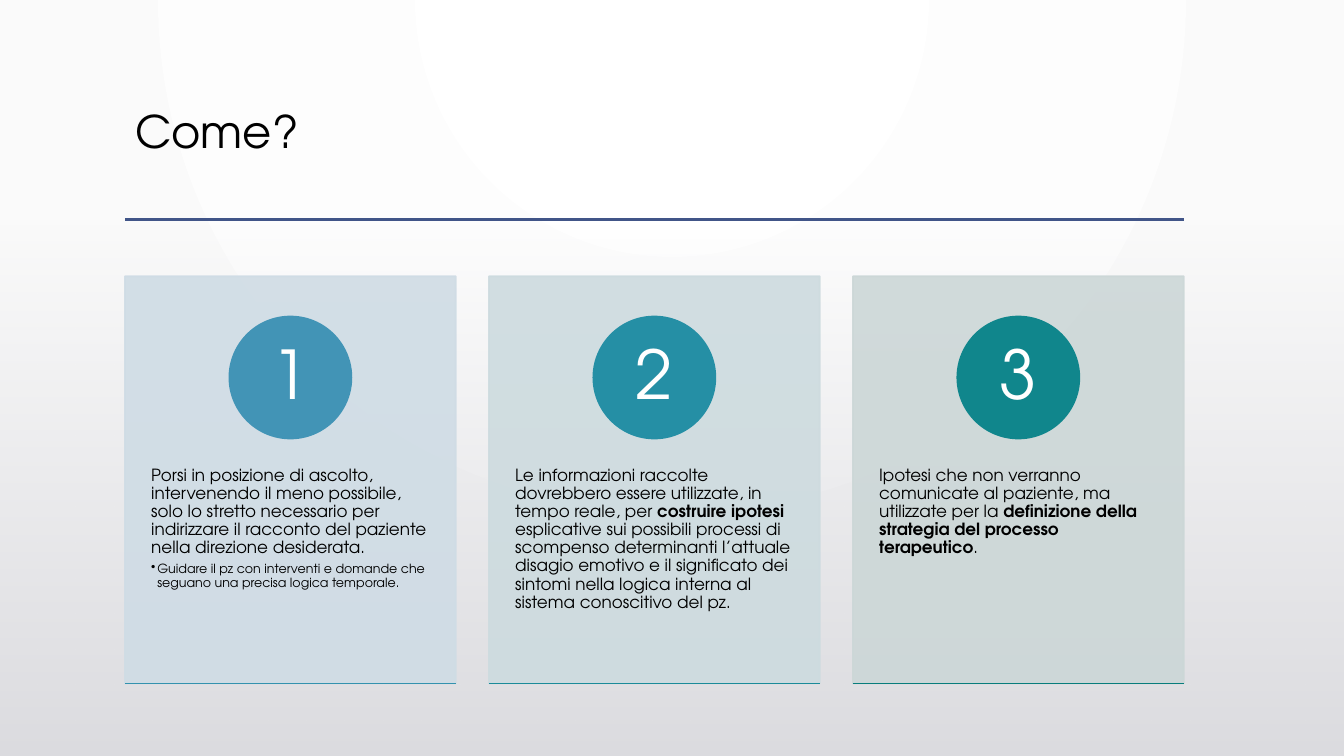
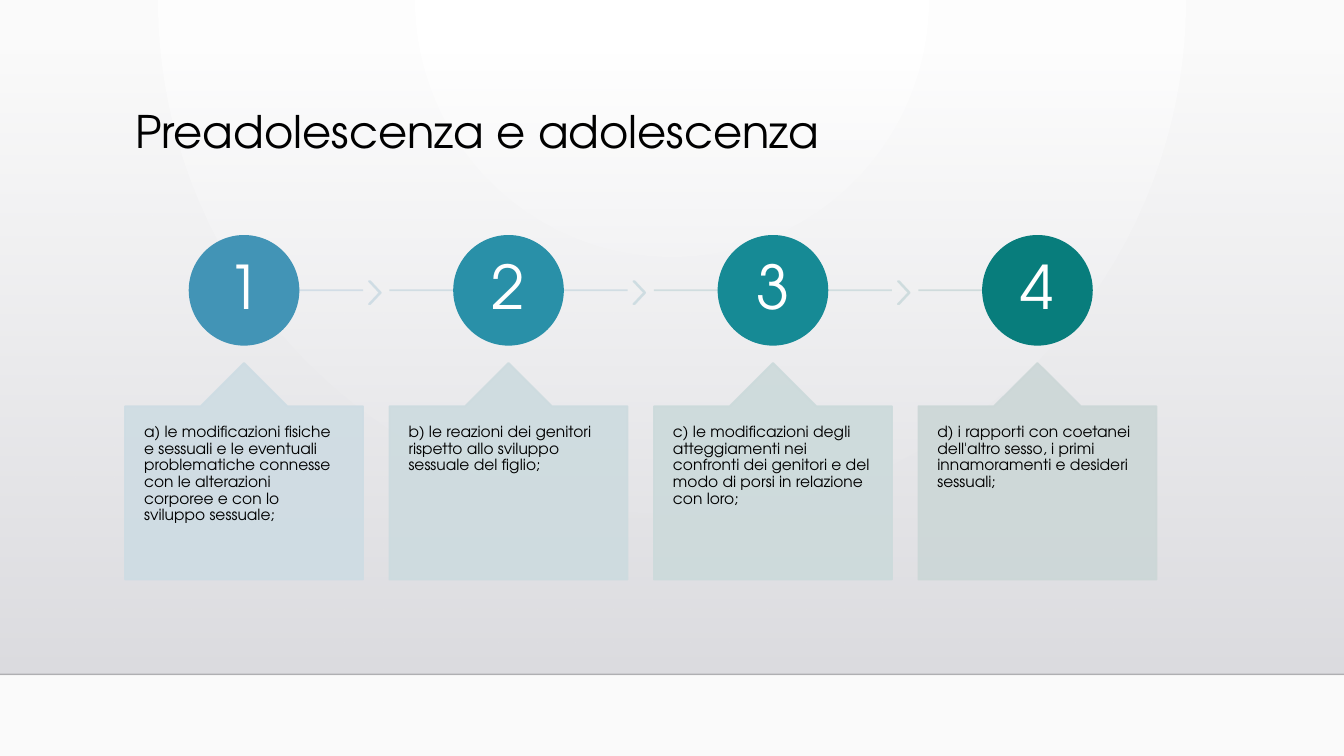
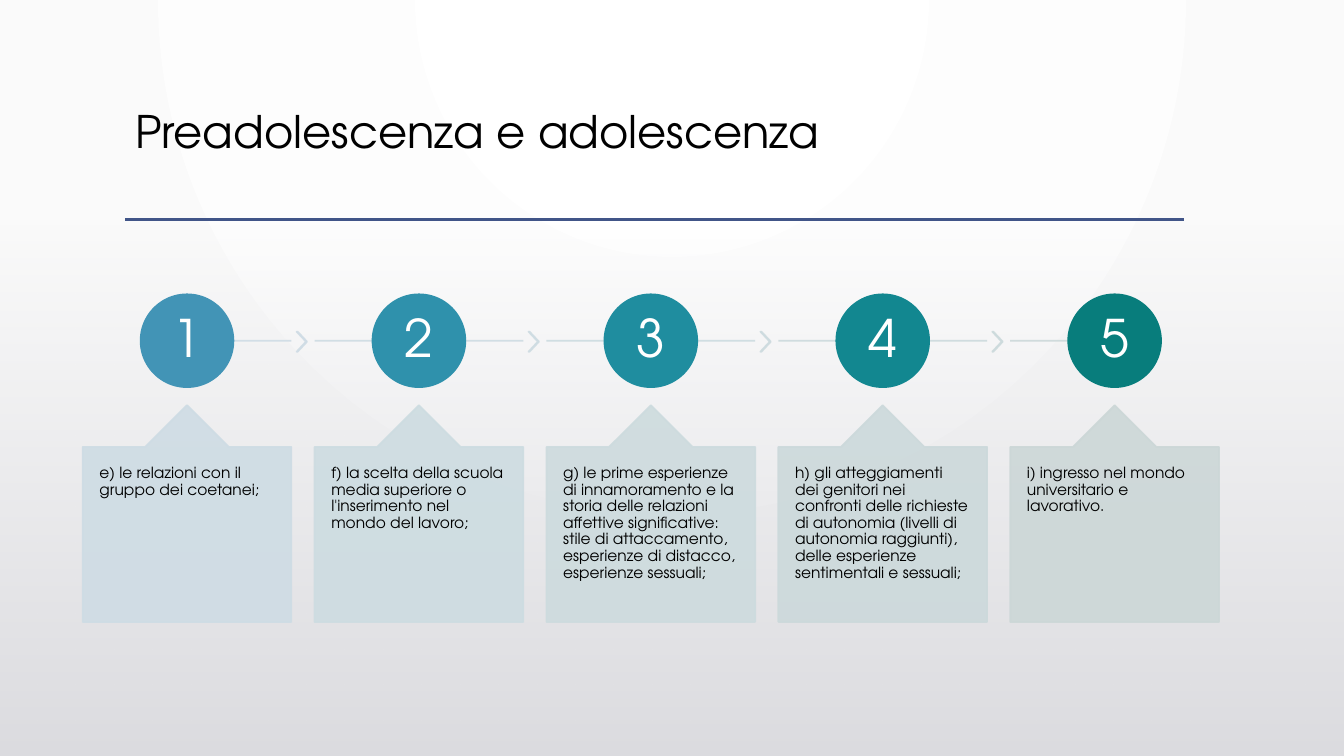
from lxml import etree
from pptx import Presentation
from pptx import util as u
from pptx.dml import color
from pptx.enum import shapes, text
from pptx.oxml import ns

FONT = "TeX Gyre Adventor"
BLACK, WHITE, RULE, HAIRLINE = "000000", "FFFFFF", "415588", "000001"
FADE, BAND_END, PAPER = "DCDCE0", "DEDEE2", "FAFAFA"
SLIDE_WIDTH, SLIDE_HEIGHT = 13.33, 7.5
MARGIN, CONTENT_WIDTH = 1.24, 10.5
TITLE_BOX = (MARGIN, 1.04, CONTENT_WIDTH, 1.15)
TINT_OPACITY = 90


# Shared helpers
def rgb(value):
    return color.RGBColor.from_string(value)


def inches(values):
    return [u.Inches(value) for value in values]


def apply(target, values):
    for name, value in values.items():
        setattr(target, name, value)


def set_opacity(shape, percent):
    for item in shape.element.spPr.iter(ns.qn("a:srgbClr")):
        etree.SubElement(item, ns.qn("a:alpha"), val=str(percent * 1000))


def set_gradient(fill, parent, stops, focus=None):
    """Stops are (position, colour, opacity); a focus makes it circular."""
    fill.background()
    gradient = etree.Element(ns.qn("a:gradFill"), rotWithShape="1")
    stop_list = etree.SubElement(gradient, ns.qn("a:gsLst"))
    for position, value, opacity in stops:
        stop = etree.SubElement(stop_list, ns.qn("a:gs"), pos=str(position * 1000))
        item = etree.SubElement(stop, ns.qn("a:srgbClr"), val=value)
        if opacity < 100:
            etree.SubElement(item, ns.qn("a:alpha"), val=str(opacity * 1000))
    if focus:
        circle = etree.SubElement(gradient, ns.qn("a:path"))
        circle.set("path", "circle")
        sides = {side: str(value * 1000) for side, value in zip("ltrb", focus)}
        etree.SubElement(circle, ns.qn("a:fillToRect"), sides)
    else:
        etree.SubElement(gradient, ns.qn("a:lin"), ang="5400000", scaled="0")
    parent.replace(parent.find(ns.qn("a:noFill")), gradient)


def add_shape(slide, kind, box, fill, opacity=100):
    shape = slide.shapes.add_shape(kind, *inches(box))
    shape.shadow.inherit = False
    shape.fill.solid()
    shape.fill.fore_color.rgb = rgb(fill)
    shape.line.color.rgb = rgb(fill)
    shape.line.width = u.Pt(1.25)
    if opacity < 100:
        set_opacity(shape, opacity)
    return shape


def add_line(slide, left, right, y, value, width=1.25, opacity=100):
    line = slide.shapes.add_connector(
        shapes.MSO_CONNECTOR.STRAIGHT, *inches((left, y, right, y)))
    line.line.color.rgb = rgb(value)
    line.line.width = u.Pt(width)
    etree.SubElement(line.element.spPr, ns.qn("a:effectLst"))
    if opacity < 100:
        set_opacity(line, opacity)


def add_fade(slide, top, height, end):
    fade = add_shape(slide, shapes.MSO_SHAPE.RECTANGLE, (0, top, SLIDE_WIDTH, height), FADE)
    fade.line.fill.background()
    set_gradient(fade.fill, fade.element.spPr, [(0, FADE, 0), (100, end, 100)])


def set_frame(shape, insets, anchor=text.MSO_ANCHOR.TOP):
    frame = shape.text_frame
    left, top, right, bottom = inches(insets)
    apply(frame, dict(word_wrap=True, auto_size=text.MSO_AUTO_SIZE.NONE,
                      vertical_anchor=anchor, margin_left=left, margin_top=top,
                      margin_right=right, margin_bottom=bottom))
    return frame


def fill_paragraph(paragraph, runs, size, value=BLACK, align=text.PP_ALIGN.LEFT, after=0):
    """Runs alternate between regular and bold."""
    apply(paragraph, dict(alignment=align, line_spacing=0.9, space_before=u.Pt(0),
                          space_after=u.Pt(after)))
    for index, words in enumerate(runs):
        run = paragraph.add_run()
        run.text = words
        apply(run.font, dict(name=FONT, size=u.Pt(size), bold=index % 2 == 1))
        run.font.color.rgb = rgb(value)


def add_bullet(paragraph, indent):
    properties = paragraph._p.get_or_add_pPr()
    properties.set("marL", str(u.Inches(indent)))
    properties.set("indent", str(u.Inches(-indent)))
    etree.SubElement(properties, ns.qn("a:buChar"), char="•")


def add_number(slide, number, box, fill, size):
    circle = add_shape(slide, shapes.MSO_SHAPE.OVAL, box, fill)
    frame = set_frame(circle, (0, 0, 0, 0), text.MSO_ANCHOR.MIDDLE)
    fill_paragraph(frame.paragraphs[0], [str(number)], size, WHITE, text.PP_ALIGN.CENTER)


# Slide frames
def add_titled_slide(presentation, title):
    slide = presentation.slides.add_slide(presentation.slide_layouts[5])
    holder = slide.shapes.title
    left, top, width, height = inches(TITLE_BOX)
    apply(holder, dict(left=left, top=top, width=width, height=height))
    frame = set_frame(holder, (0.1, 0.05, 0.1, 0.05))
    fill_paragraph(frame.paragraphs[0], [title], 32)
    return slide


def add_ruled_backdrop(slide):
    add_line(slide, MARGIN, MARGIN + CONTENT_WIDTH, 2.18, RULE, 2.5)
    add_fade(slide, 2.21, SLIDE_HEIGHT - 2.21, FADE)


def add_band_backdrop(slide):
    add_fade(slide, 0.51, 6.18, BAND_END)
    add_line(slide, 0, SLIDE_WIDTH, 6.69, HAIRLINE, 1, 20)


# Numbered cards in a row
def add_cards(slide, box, cards):
    left, top, width, height = box
    card_width, diameter = 3.28, 1.21
    pitch = (width - card_width) / (len(cards) - 1)
    for index, (tint, circle, edge, runs, detail) in enumerate(cards):
        x = left + index * pitch
        card = add_shape(slide, shapes.MSO_SHAPE.RECTANGLE,
                         (x, top, card_width, height), tint, TINT_OPACITY)
        frame = set_frame(card, (0.26, 1.89, 0.26, 0.36))
        fill_paragraph(frame.paragraphs[0], runs, 12, after=4)
        if detail:
            paragraph = frame.add_paragraph()
            add_bullet(paragraph, 0.06)
            fill_paragraph(paragraph, [detail], 9)
        add_number(slide, index + 1, (x + (card_width - diameter) / 2, top + 0.4,
                                      diameter, diameter), circle, 48)
        add_line(slide, x, x + card_width, top + height, edge)


# Numbered steps above callouts, joined by lines and chevrons
def add_steps(slide, box, diameter, number_size, steps):
    left, top, width, height = box
    count = len(steps)
    step_width = width / (count + (count - 1) / 9)
    gap = step_width / 9
    middle = top + diameter / 2
    callout_height = 2.15
    chevron_width = step_width * 0.05
    for index, (line, chevron, circle, tint, words) in enumerate(steps):
        x = left + index * (step_width + gap)
        center = x + step_width / 2
        start = x if index else center
        end = x + step_width if chevron else center
        add_line(slide, start, end, middle, line, opacity=TINT_OPACITY)
        if chevron:
            arrow = add_shape(slide, shapes.MSO_SHAPE.CHEVRON,
                              (x + step_width + chevron_width / 2, middle - 0.09,
                               chevron_width, chevron_width * 1.92), chevron, TINT_OPACITY)
            arrow.adjustments[0] = 0.9
        add_number(slide, index + 1, (center - diameter / 2, top, diameter, diameter),
                   circle, number_size)
        callout = add_shape(slide, shapes.MSO_SHAPE.UP_ARROW_CALLOUT,
                            (x, top + height - callout_height, step_width, callout_height),
                            tint, TINT_OPACITY)
        for position, value in enumerate((0.5, 0.2, 0.2, 1)):
            callout.adjustments[position] = value
        inset = step_width * 0.08
        frame = set_frame(callout, (inset, 0.18, inset, 0.18))
        fill_paragraph(frame.paragraphs[0], [words], 11)


# Content: tint, circle, bottom edge, runs, detail
CARDS = [
    ("CFDCE5", "4294B6", "3392AE",
     ["Porsi in posizione di ascolto, intervenendo il meno possibile, solo lo stretto "
      "necessario per indirizzare il racconto del paziente nella direzione desiderata."],
     "Guidare il pz con interventi e domande che seguano una precisa logica temporale."),
    ("CDDBDF", "258FA5", "1A8B99",
     ["Le informazioni raccolte dovrebbero essere utilizzate, in tempo reale, per ",
      "costruire ipotesi ",
      "esplicative sui possibili processi di scompenso determinanti l’attuale disagio "
      "emotivo e il significato dei sintomi nella logica interna al sistema conoscitivo "
      "del pz."], None),
    ("CCD7D7", "10868C", "087D7C",
     ["Ipotesi che non verranno comunicate al paziente, ma utilizzate per la ",
      "definizione della strategia del processo terapeutico", "."], None),
]
# Content: line, chevron, circle, callout, words
EARLY_STEPS = [
    ("CFDCE5", "CEDCE4", "4294B6", "CEDCE3",
     "a) le modificazioni fisiche e sessuali e le eventuali problematiche connesse con le "
     "alterazioni corporee e con lo sviluppo sessuale;"),
    ("CEDCE2", "CDDCE1", "2990A8", "CDDBDF",
     "b) le reazioni dei genitori rispetto allo sviluppo sessuale del figlio;"),
    ("CDDBDE", "CDDBDD", "168A95", "CCDADB",
     "c) le modificazioni degli atteggiamenti nei confronti dei genitori e del modo di "
     "porsi in relazione con loro;"),
    ("CCD9DA", None, "087D7C", "CCD7D7",
     "d) i rapporti con coetanei dell'altro sesso, i primi innamoramenti e desideri "
     "sessuali;"),
]
LATER_STEPS = [
    ("CFDCE5", "CFDCE5", "4294B6", "CEDCE4", "e) le relazioni con il gruppo dei coetanei;"),
    ("CEDCE3", "CEDCE2", "2F91AC", "CDDCE1",
     "f) la scelta della scuola media superiore o l'inserimento nel mondo del lavoro;"),
    ("CDDCE0", "CDDBDF", "1F8D9F", "CDDBDE",
     "g) le prime esperienze di innamoramento e la storia delle relazioni affettive "
     "significative: stile di attaccamento, esperienze di distacco, esperienze sessuali;"),
    ("CCDADD", "CCDADC", "128790", "CCD9DB",
     "h) gli atteggiamenti dei genitori nei confronti delle richieste di autonomia "
     "(livelli di autonomia raggiunti), delle esperienze sentimentali e sessuali;"),
    ("CCD9DA", None, "087D7C", "CCD7D7",
     "i) ingresso nel mondo universitario e lavorativo."),
]


def main():
    presentation = Presentation()
    presentation.slide_width = u.Inches(SLIDE_WIDTH)
    presentation.slide_height = u.Inches(SLIDE_HEIGHT)
    master = presentation.slide_master
    background = master.background.fill
    background.background()
    set_gradient(background, master.element.find(".//" + ns.qn("p:bgPr")),
                 [(0, WHITE, 100), (100, PAPER, 100)], focus=(43, 0, 43, 100))

    slide = add_titled_slide(presentation, "Come?")
    add_ruled_backdrop(slide)
    add_cards(slide, (MARGIN, 2.74, CONTENT_WIDTH, 4.04), CARDS)

    stages_title = "Preadolescenza e adolescenza"
    slide = add_titled_slide(presentation, stages_title)
    add_band_backdrop(slide)
    # The title stays in front of the band
    tree = slide.shapes.title.element.getparent()
    tree.append(slide.shapes.title.element)
    add_steps(slide, (MARGIN, 2.34, 10.23, 3.41), 1.08, 43, EARLY_STEPS)

    slide = add_titled_slide(presentation, stages_title)
    add_ruled_backdrop(slide)
    add_steps(slide, (0.82, 2.92, 11.27, 3.25), 0.92, 37, LATER_STEPS)

    presentation.save("out.pptx")


if __name__ == "__main__":
    main()
